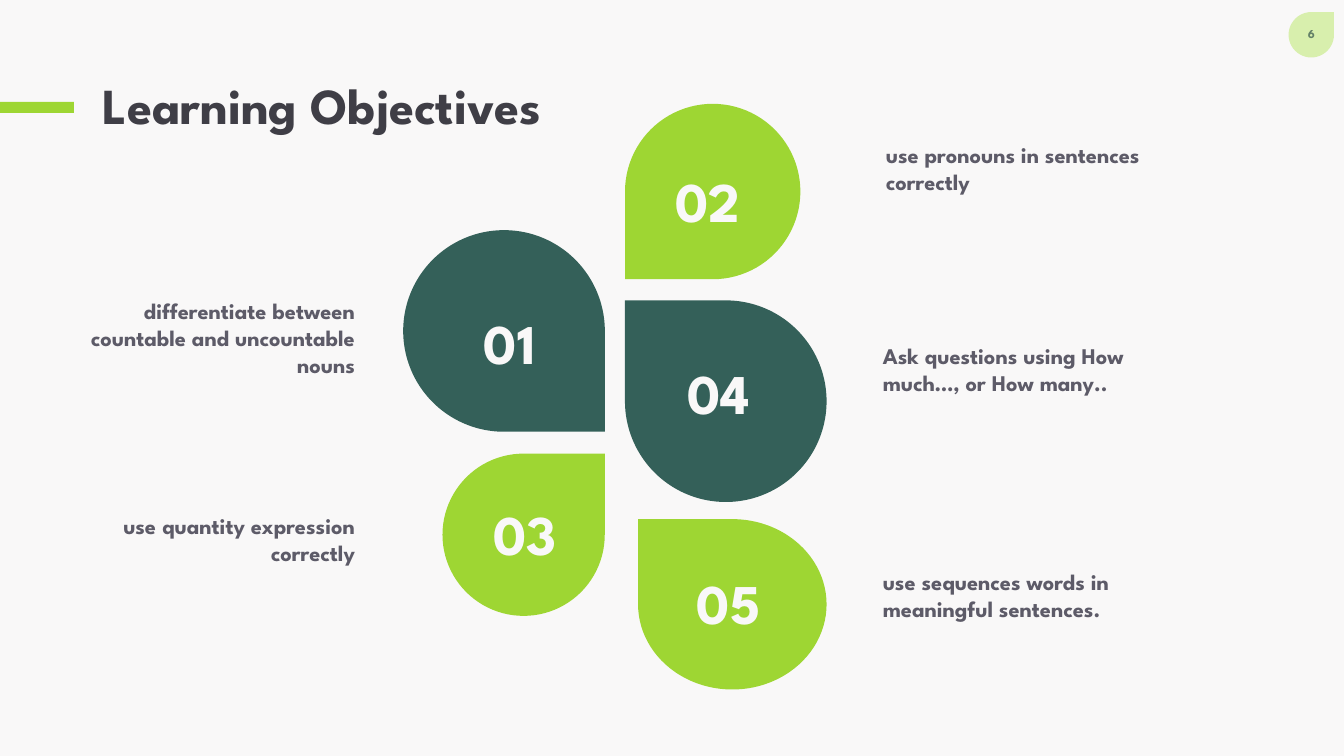
from dataclasses import dataclass
from enum import Enum

import lxml.etree
import pptx
import pptx.dml.color
import pptx.enum.shapes
import pptx.enum.text
import pptx.oxml.ns
import pptx.util

Align = pptx.enum.text.PP_ALIGN
Anchor = pptx.enum.text.MSO_ANCHOR
Preset = pptx.enum.shapes.MSO_SHAPE

FONT = "League Spartan"
COLORS = {
    "paper": "F9F8F8",
    "lime": "9ED633",
    "pale_lime": "D8EFAD",
    "teal": "346059",
    "page_number": "274843",
    "title": "3F3E46",
    "body": "5D5B68",
}

# Grid of 80 columns by 45 rows
SLIDE_WIDTH = pptx.util.Inches(13.33)
SLIDE_HEIGHT = pptx.util.Inches(7.5)
COLUMN = SLIDE_WIDTH / 80
ROW = SLIDE_HEIGHT / 45

LEFT_STEM, RIGHT_STEM = 36, 37.2
LEFT_TEXT, RIGHT_TEXT = 3.96, 51.96
TEXT_WIDTH = 17.76
NUMBER_WIDTH, NUMBER_HEIGHT = 5.22, 4.62


class Tip(Enum):
    """Corner of the petal's point: rotation, then shares of width and height."""
    TOP_RIGHT = (0, 1, 0)
    BOTTOM_RIGHT = (90, 1, 1)
    BOTTOM_LEFT = (180, 0, 1)
    TOP_LEFT = (270, 0, 0)


@dataclass(frozen=True)
class Box:
    left: float
    top: float
    width: float
    height: float

    def emu(self) -> tuple[int, int, int, int]:
        return (round(self.left * COLUMN), round(self.top * ROW),
                round(self.width * COLUMN), round(self.height * ROW))


@dataclass(frozen=True)
class Objective:
    number: str
    wording: str
    color: str
    tip: Tip
    tip_column: float
    tip_row: float
    width: float
    height: float
    number_column: float
    number_row: float
    text_column: float
    text_row: float
    lines: int = 2


OBJECTIVES = [
    Objective("01", "differentiate between countable and uncountable nouns", "teal",
              Tip.BOTTOM_RIGHT, LEFT_STEM, 25.7, 12, 12, 27.24, 18.06,
              LEFT_TEXT, 17.4, lines=3),
    Objective("02", "use pronouns in sentences correctly", "lime",
              Tip.BOTTOM_LEFT, RIGHT_STEM, 16.62, 10.44, 10.44, 39.42, 9.6,
              52.14, 8.1),
    Objective("03", "use quantity expression correctly", "lime",
              Tip.TOP_RIGHT, LEFT_STEM, 27, 9.66, 9.66, 28.5, 29.46,
              LEFT_TEXT, 30.18),
    Objective("04", "Ask questions using How much…, or How many..", "teal",
              Tip.TOP_LEFT, RIGHT_STEM, 17.88, 12, 12, 40.02, 21.06,
              RIGHT_TEXT, 20.1),
    Objective("05", "use sequences words in meaningful sentences.", "lime",
              Tip.TOP_LEFT, 37.98, 30.9, 11.22, 10.14, 40.62, 33.54,
              RIGHT_TEXT, 33.54),
]


def rgb(color: str) -> pptx.dml.color.RGBColor:
    return pptx.dml.color.RGBColor.from_string(COLORS[color])


def add_filled(slide, preset, box: Box, color: str, rotation: int = 0) -> None:
    left, top, width, height = box.emu()
    if rotation in (90, 270):
        # A quarter turn swaps the sides around the same centre
        left, top = left + (width - height) // 2, top + (height - width) // 2
        width, height = height, width
    shape = slide.shapes.add_shape(preset, left, top, width, height)
    shape.rotation = rotation
    shape.fill.solid()
    shape.fill.fore_color.rgb = rgb(color)
    shape.line.fill.background()
    shape.shadow.inherit = False


def add_petal(slide, objective: Objective) -> None:
    rotation, share_x, share_y = objective.tip.value
    box = Box(objective.tip_column - share_x * objective.width,
              objective.tip_row - share_y * objective.height,
              objective.width, objective.height)
    add_filled(slide, Preset.TEAR, box, objective.color, rotation)


def add_text(slide, wording: str, box: Box, size: float, color: str,
             align=Align.LEFT, anchor=Anchor.TOP):
    frame = slide.shapes.add_textbox(*box.emu()).text_frame
    frame.word_wrap = True
    frame.vertical_anchor = anchor
    frame.text = wording
    paragraph = frame.paragraphs[0]
    paragraph.alignment = align
    font = paragraph.runs[0].font
    font.name = FONT
    font.size = pptx.util.Pt(size)
    font.bold = True
    font.color.rgb = rgb(color)
    return paragraph


def add_page_mark(slide, number: str) -> None:
    add_filled(slide, Preset.TEAR, Box(76.7, 0.72, 2.7, 2.7), "pale_lime")
    paragraph = add_text(slide, number, Box(76.7, 1.26, 2.7, 1.6), 9,
                         "page_number", Align.CENTER)
    # 65 % opacity for the page number
    run_color = next(paragraph.runs[0]._r.iter(pptx.oxml.ns.qn("a:srgbClr")))
    lxml.etree.SubElement(run_color, pptx.oxml.ns.qn("a:alpha"), val="65000")


def main() -> None:
    deck = pptx.Presentation()
    deck.slide_width, deck.slide_height = SLIDE_WIDTH, SLIDE_HEIGHT
    slide = deck.slides.add_slide(deck.slide_layouts[6])
    slide.background.fill.solid()
    slide.background.fill.fore_color.rgb = rgb("paper")

    # Page number and heading
    add_page_mark(slide, "6")
    add_filled(slide, Preset.RECTANGLE, Box(0, 6.06, 4.4, 0.66), "lime")
    heading = add_text(slide, "Learning Objectives", Box(5.52, 2.4, 59.4, 8.04),
                       36, "title", anchor=Anchor.MIDDLE)
    heading.line_spacing = 0.9

    # Numbered petals with their objectives
    for objective in OBJECTIVES:
        add_petal(slide, objective)
        add_text(slide, objective.number,
                 Box(objective.number_column, objective.number_row,
                     NUMBER_WIDTH, NUMBER_HEIGHT), 40, "paper", Align.RIGHT)
        align = Align.RIGHT if objective.text_column == LEFT_TEXT else Align.LEFT
        add_text(slide, objective.wording,
                 Box(objective.text_column, objective.text_row,
                     TEXT_WIDTH, 0.6 + 1.62 * objective.lines), 16, "body", align)

    deck.save("out.pptx")


if __name__ == "__main__":
    main()
